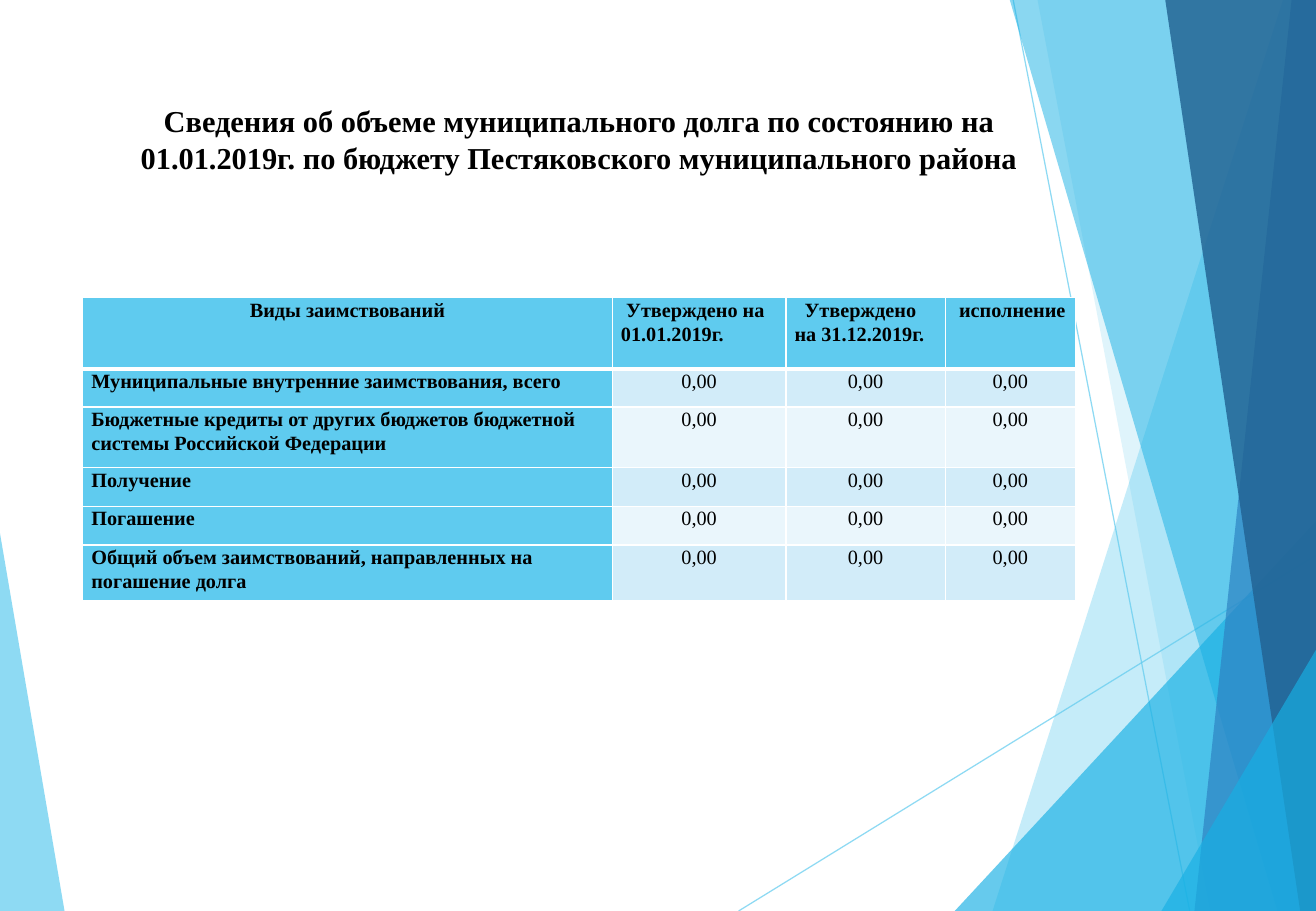
from typing import Any, NamedTuple

from pptx import Presentation
from pptx import util as u
from pptx.dml.color import RGBColor
from pptx.enum import shapes, text
from pptx.oxml import parse_xml
from pptx.oxml.ns import nsdecls, qn

WIDTH, HEIGHT = 27.51, 19.05
FONT = "Times New Roman"

BLACK = RGBColor(0x00, 0x00, 0x00)
WHITE = RGBColor(0xFF, 0xFF, 0xFF)
SKY = RGBColor(0x5F, 0xCB, 0xEF)
CYAN = RGBColor(0x17, 0xB0, 0xE4)
BLUE = RGBColor(0x2E, 0x83, 0xC3)
NAVY = RGBColor(0x22, 0x62, 0x92)
BAND_DARK = RGBColor(0xD2, 0xEC, 0xF9)
BAND_LIGHT = RGBColor(0xEA, 0xF6, 0xFC)

Point = tuple[float, float]


class Facet(NamedTuple):
    color: RGBColor
    opacity: int
    corners: list[Point]


class Ray(NamedTuple):
    start: Point
    end: Point


class Heading(NamedTuple):
    label: str
    indent: float  # first-line indent, cm


class Borrowing(NamedTuple):
    kind: str
    height: float
    amounts: tuple[str, str, str] = ("0,00",) * 3


# Background decoration, from back to front (cm)
BOTTOM_RIGHT: Point = (WIDTH, HEIGHT)
TOP_RIGHT: Point = (WIDTH, 0)
LEFT_FACET = Facet(SKY, 70, [(0, 11.15), (1.35, HEIGHT), (0, HEIGHT)])
RAYS = [
    Ray((15.44, HEIGHT), (WIDTH, 11.61)),
    Ray((21.18, 0), (24.87, HEIGHT)),
]
RIGHT_FACETS = [
    Facet(SKY, 36, [(26.82, 0), (20.75, HEIGHT), BOTTOM_RIGHT, TOP_RIGHT]),
    Facet(SKY, 20, [(21.69, 0), (25.3, HEIGHT), BOTTOM_RIGHT, TOP_RIGHT]),
    Facet(CYAN, 66, [(19.96, HEIGHT), (WIDTH, 10.9), BOTTOM_RIGHT]),
    Facet(CYAN, 50, [(21.11, 0), (26.7, HEIGHT), BOTTOM_RIGHT, TOP_RIGHT]),
    Facet(BLUE, 70, [(27, 0), (24.97, HEIGHT), BOTTOM_RIGHT, TOP_RIGHT]),
    Facet(NAVY, 82, [(24.36, 0), (27.18, HEIGHT), BOTTOM_RIGHT, TOP_RIGHT]),
    Facet(CYAN, 66, [(24.28, HEIGHT), (WIDTH, 13.59), BOTTOM_RIGHT]),
]

# Table content
TITLE = ("Сведения об объеме муниципального долга по состоянию на "
         "01.01.2019г. по бюджету Пестяковского муниципального района")
COLUMN_WIDTHS = [11.07, 3.63, 3.33, 2.72]
HEADER_HEIGHT = 1.5
HEADINGS = [
    Heading("Виды заимствований", 0),
    Heading("Утверждено на 01.01.2019г.", 0.11),
    Heading("Утверждено на 31.12.2019г.", 0.21),
    Heading("исполнение", 0.11),
]
BORROWINGS = [
    Borrowing("Муниципальные внутренние заимствования, всего", 0.79),
    Borrowing("Бюджетные кредиты от других бюджетов бюджетной системы "
              "Российской Федерации", 1.27),
    Borrowing("Получение", 0.81),
    Borrowing("Погашение", 0.81),
    Borrowing("Общий объем заимствований, направленных на погашение долга", 1.17),
]

TITLE_FONT = {"name": FONT, "size": u.Pt(18), "bold": True}
LABEL_FONT = {"name": FONT, "size": u.Pt(12), "bold": True}
AMOUNT_FONT = LABEL_FONT | {"bold": False}
CELL_MARGINS = {"margin_left": u.Cm(0.18), "margin_right": u.Cm(0.18),
                "margin_top": 0, "margin_bottom": 0}
TITLE_FRAME = {"word_wrap": True, "vertical_anchor": text.MSO_ANCHOR.MIDDLE,
               "auto_size": text.MSO_AUTO_SIZE.SHAPE_TO_FIT_TEXT}


def apply(target: Any, values: dict[str, Any]) -> None:
    for name, value in values.items():
        setattr(target, name, value)


def set_opacity(shape: Any, percent: int) -> None:
    for color in shape._element.spPr.iter(qn("a:srgbClr")):
        color.append(parse_xml(f'<a:alpha {nsdecls("a")} val="{percent * 1000}"/>'))


def draw_facet(slide: Any, facet: Facet) -> None:
    first, *rest = [(u.Cm(x), u.Cm(y)) for x, y in facet.corners]
    builder = slide.shapes.build_freeform(*first)
    builder.add_line_segments(rest, close=True)
    shard = builder.convert_to_shape()
    shard.shadow.inherit = False
    shard.fill.solid()
    shard.fill.fore_color.rgb = facet.color
    shard.line.fill.background()
    set_opacity(shard, facet.opacity)


def draw_ray(slide: Any, ray: Ray) -> None:
    beam = slide.shapes.add_connector(
        shapes.MSO_CONNECTOR.STRAIGHT, *(u.Cm(v) for v in ray.start + ray.end))
    beam.line.color.rgb = SKY
    beam.line.width = u.Pt(0.75)
    set_opacity(beam, 70)
    beam._element.spPr.append(parse_xml(f'<a:effectLst {nsdecls("a")}/>'))


def write(paragraph: Any, words: str, font: dict[str, Any], centred: bool) -> None:
    paragraph.text = words
    paragraph.alignment = text.PP_ALIGN.CENTER if centred else text.PP_ALIGN.LEFT
    apply(paragraph.font, font)
    paragraph.font.color.rgb = BLACK


def fill_cell(cell: Any, words: str, font: dict[str, Any], centred: bool,
              color: RGBColor, top: int = 1, bottom: int = 1) -> None:
    apply(cell, CELL_MARGINS)
    properties = cell._tc.get_or_add_tcPr()
    for side, points in {"L": 1, "R": 1, "T": top, "B": bottom}.items():
        properties.append(parse_xml(
            f'<a:ln{side} {nsdecls("a")} w="{u.Pt(points)}"><a:solidFill>'
            f'<a:srgbClr val="{WHITE}"/></a:solidFill></a:ln{side}>'))
    cell.fill.solid()
    cell.fill.fore_color.rgb = color
    paragraph = cell.text_frame.paragraphs[0]
    paragraph.line_spacing = 1.07
    write(paragraph, words, font, centred)


def draw_debt_table(slide: Any) -> None:
    heights = [HEADER_HEIGHT] + [b.height for b in BORROWINGS]
    debt = slide.shapes.add_table(
        len(heights), len(COLUMN_WIDTHS), u.Cm(1.73), u.Cm(6.22),
        u.Cm(sum(COLUMN_WIDTHS)), u.Cm(sum(heights))).table
    for column, width in zip(debt.columns, COLUMN_WIDTHS):
        column.width = u.Cm(width)
    for row, height in zip(debt.rows, heights):
        row.height = u.Cm(height)

    # Header row
    for col, heading in enumerate(HEADINGS):
        cell = debt.cell(0, col)
        fill_cell(cell, heading.label, LABEL_FONT, col == 0, SKY, bottom=3)
        properties = cell.text_frame.paragraphs[0]._p.get_or_add_pPr()
        properties.set("indent", str(u.Cm(heading.indent)))

    # Borrowing rows
    for row, borrowing in enumerate(BORROWINGS, 1):
        top = 3 if row == 1 else 1
        band = BAND_DARK if row % 2 else BAND_LIGHT
        fill_cell(debt.cell(row, 0), borrowing.kind, LABEL_FONT, False, SKY, top)
        for col, amount in enumerate(borrowing.amounts, 1):
            fill_cell(debt.cell(row, col), amount, AMOUNT_FONT, True, band, top)


def draw_title(slide: Any) -> None:
    title = slide.shapes.add_textbox(
        u.Cm(1.73), u.Cm(2.05), u.Cm(sum(COLUMN_WIDTHS)), u.Cm(1.71))
    apply(title.text_frame, TITLE_FRAME)
    write(title.text_frame.paragraphs[0], TITLE, TITLE_FONT, True)


def main() -> None:
    deck = Presentation()
    deck.slide_width, deck.slide_height = u.Cm(WIDTH), u.Cm(HEIGHT)
    slide = deck.slides.add_slide(deck.slide_layouts[6])
    draw_facet(slide, LEFT_FACET)
    for ray in RAYS:
        draw_ray(slide, ray)
    for facet in RIGHT_FACETS:
        draw_facet(slide, facet)
    draw_debt_table(slide)
    draw_title(slide)
    deck.save("out.pptx")


if __name__ == "__main__":
    main()
